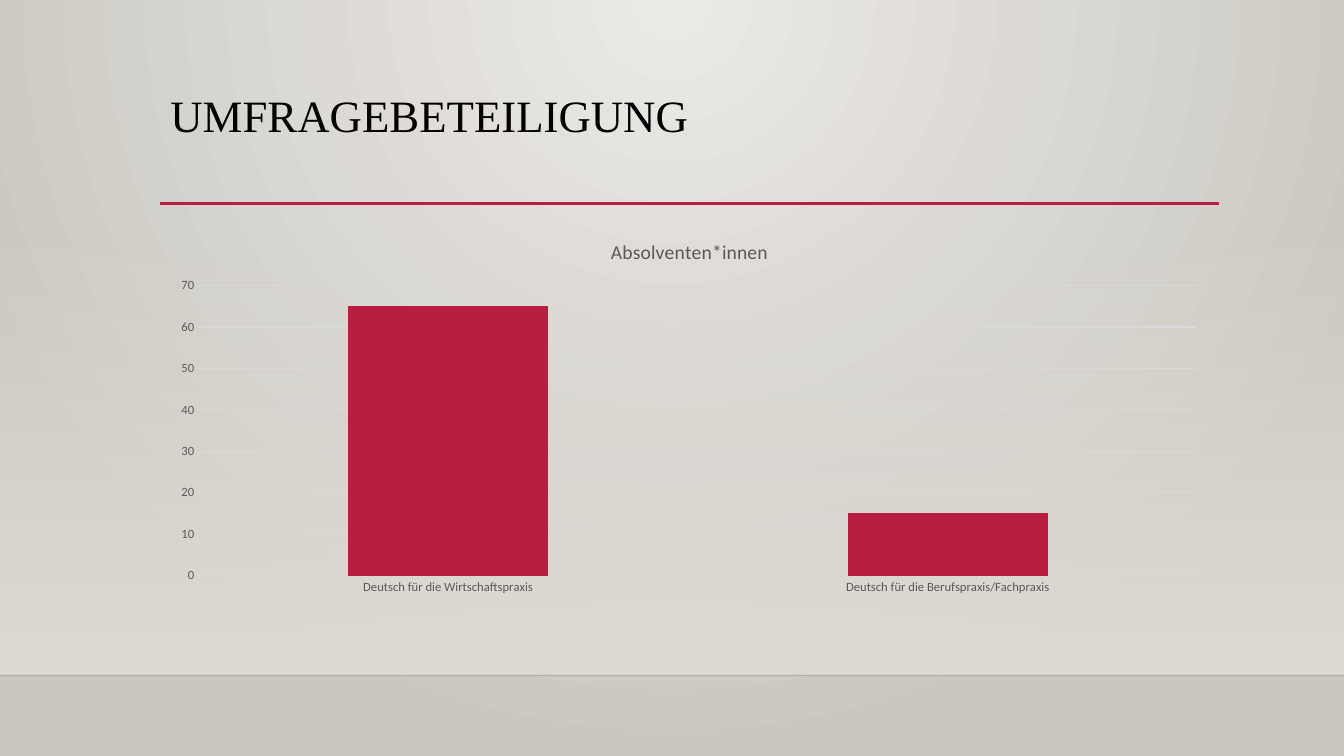
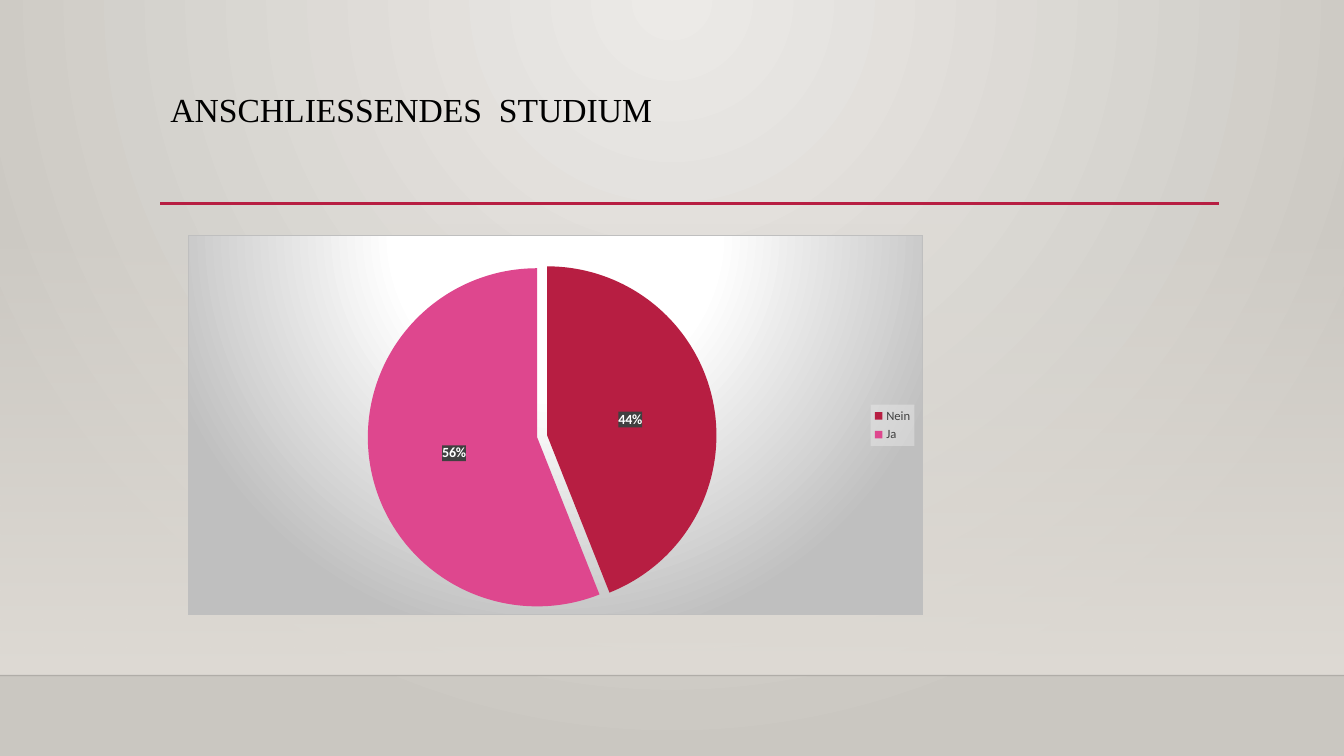
from pptx import Presentation
from pptx.chart.data import CategoryChartData
from pptx.dml.color import RGBColor
from pptx.enum.chart import (XL_CHART_TYPE, XL_LABEL_POSITION,
                             XL_LEGEND_POSITION, XL_TICK_MARK)
from pptx.enum.shapes import MSO_CONNECTOR, MSO_SHAPE, PP_PLACEHOLDER
from pptx.enum.text import MSO_ANCHOR, MSO_AUTO_SIZE, PP_ALIGN
from pptx.oxml import parse_xml
from pptx.oxml.ns import nsdecls, qn
from pptx.util import Pt

# Content
PARTICIPATION = {
    "title": "UMFRAGEBETEILIGUNG", "title_size": 32,
    "chart_title": "Absolventen*innen",
    "values": {"Deutsch für die Wirtschaftspraxis": 65,
               "Deutsch für die Berufspraxis/Fachpraxis": 15},
}
STUDIES = {
    "title": "ANSCHLIESSENDES  STUDIUM", "title_size": 24,
    "values": {"Nein": 44, "Ja": 56},
}

# Colours and fonts
BLACK = RGBColor(0x00, 0x00, 0x00)
WHITE = RGBColor(0xFF, 0xFF, 0xFF)
RED = RGBColor(0xB7, 0x1E, 0x42)
PINK = RGBColor(0xDE, 0x47, 0x8E)
PAGE_LIGHT = RGBColor(0xEC, 0xEA, 0xE7)
PAGE_DARK = RGBColor(0xCA, 0xC7, 0xC1)
BAND = RGBColor(0xDF, 0xDB, 0xD5)
AXIS_TEXT = RGBColor(0x59, 0x59, 0x59)
DARK_GREY = RGBColor(0x40, 0x40, 0x40)
MID_GREY = RGBColor(0xBF, 0xBF, 0xBF)
GRID = RGBColor(0xD9, 0xD9, 0xD9)
PALE_GREY = RGBColor(0xF2, 0xF2, 0xF2)
TITLE_FONT = "Times New Roman"
CHART_FONT = "Calibri"

# Geometry in points
SLIDE_WIDTH, SLIDE_HEIGHT = 960, 540
MARGIN, CONTENT_WIDTH = 114.5, 756
TITLE_BOX = (MARGIN, 63.5, CONTENT_WIDTH, 82.5)
RULE_Y = 145.5
BAND_TOP, BAND_BOTTOM = 159, 482.5
COLUMN_BOX = (MARGIN, 158.4, CONTENT_WIDTH, 271.5)
PIE_BOX = (134, 168, 525.5, 271.5)
PIE_PLOT = {"x": 0.04, "y": 0.07, "w": 0.884, "h": 0.919}


def points(box):
    return [Pt(value) for value in box]


def color_xml(color, alpha=100):
    return f'<a:srgbClr val="{color}"><a:alpha val="{alpha * 1000}"/></a:srgbClr>'


def solid_xml(color, alpha=100):
    return f"<a:solidFill>{color_xml(color, alpha)}</a:solidFill>"


def radial_xml(left, top, right, bottom):
    return (f'<a:path path="circle"><a:fillToRect l="{left * 1000}" t="{top * 1000}" '
            f'r="{right * 1000}" b="{bottom * 1000}"/></a:path>')


def gradient_xml(stops, direction):
    """Stops are (position, colour, alpha), all in percent."""
    stop_list = "".join(f'<a:gs pos="{position * 1000}">{color_xml(color, alpha)}</a:gs>'
                        for position, color, alpha in stops)
    return (f'<a:gradFill {nsdecls("a")} rotWithShape="1">'
            f"<a:gsLst>{stop_list}</a:gsLst>{direction}</a:gradFill>")


def replace_solid(parent, gradient):
    parent.replace(parent.find(qn("a:solidFill")), parse_xml(gradient))


def chart_properties(content):
    return parse_xml(f'<c:spPr {nsdecls("c", "a")}>{content}</c:spPr>')


def style_font(font, size, color, name=CHART_FONT, bold=False):
    font.size = Pt(size)
    font.color.rgb = color
    font.name = name
    font.bold = bold


def add_line(slide, left, right, y, color, width, alpha=100):
    line = slide.shapes.add_connector(MSO_CONNECTOR.STRAIGHT, *points((left, y, right, y)))
    line.line.color.rgb = color
    line.line.width = Pt(width)
    properties = line.element.spPr
    color_element = properties.find(".//" + qn("a:srgbClr"))
    color_element.append(parse_xml(f'<a:alpha {nsdecls("a")} val="{alpha * 1000}"/>'))
    properties.append(parse_xml(f'<a:effectLst {nsdecls("a")}/>'))
    return line


def set_background(master):
    master.background.fill.solid()
    stops = [(0, PAGE_LIGHT, 100), (100, PAGE_DARK, 100)]
    replace_solid(master.element.find(".//" + qn("p:bgPr")),
                  gradient_xml(stops, radial_xml(43, 0, 43, 100)))


def decorate_layout(layout, slide):
    """Build the band and rules on a slide, then move them to its layout."""
    for placeholder in list(layout.placeholders):
        if placeholder.placeholder_format.type != PP_PLACEHOLDER.TITLE:
            layout.shapes.element.remove(placeholder.element)
    band = slide.shapes.add_shape(
        MSO_SHAPE.RECTANGLE,
        *points((0, BAND_TOP, SLIDE_WIDTH, BAND_BOTTOM - BAND_TOP)))
    band.shadow.inherit = False
    band.line.fill.background()
    band.fill.solid()
    replace_solid(band.element.spPr, gradient_xml(
        [(0, BAND, 0), (100, BAND, 100)], '<a:lin ang="5400000" scaled="0"/>'))
    floor = add_line(slide, 0, SLIDE_WIDTH, BAND_BOTTOM, BLACK, 1, alpha=20)
    rule = add_line(slide, MARGIN, MARGIN + CONTENT_WIDTH, RULE_Y, RED, 2.5)
    for shape in (band, floor, rule):
        layout.shapes.element.append(shape.element)


def set_title(slide, content):
    title = slide.shapes.title
    title.left, title.top, title.width, title.height = points(TITLE_BOX)
    frame = title.text_frame
    frame.word_wrap = True
    frame.auto_size = MSO_AUTO_SIZE.NONE
    frame.vertical_anchor = MSO_ANCHOR.TOP
    paragraph = frame.paragraphs[0]
    paragraph.alignment = PP_ALIGN.LEFT
    paragraph.line_spacing = 0.9
    run = paragraph.add_run()
    run.text = content["title"]
    style_font(run.font, content["title_size"], BLACK, TITLE_FONT)


def add_chart(slide, kind, box, values):
    data = CategoryChartData()
    data.categories = list(values)
    data.add_series("Series 1", list(values.values()))
    chart = slide.shapes.add_chart(kind, *points(box), data).chart
    style_font(chart.font, 10, BLACK)
    chart.has_title = False
    chart.has_legend = False
    return chart


def add_column_chart(slide, content):
    chart = add_chart(slide, XL_CHART_TYPE.COLUMN_CLUSTERED, COLUMN_BOX, content["values"])
    chart.has_title = True
    run = chart.chart_title.text_frame.paragraphs[0].add_run()
    run.text = content["chart_title"]
    style_font(run.font, 14, AXIS_TEXT)
    chart.chart_title.include_in_layout = False

    # Columns
    plot = chart.plots[0]
    plot.gap_width = 150
    plot.vary_by_categories = False
    fill = plot.series[0].format.fill
    fill.solid()
    fill.fore_color.rgb = RED

    # Axes
    for axis in (chart.category_axis, chart.value_axis):
        axis.major_tick_mark = axis.minor_tick_mark = XL_TICK_MARK.NONE
        axis.format.line.fill.background()
        style_font(axis.tick_labels.font, 9, AXIS_TEXT)
    value_axis = chart.value_axis
    value_axis.minimum_scale, value_axis.maximum_scale, value_axis.major_unit = 0, 70, 10
    value_axis.has_major_gridlines = True
    grid_line = value_axis.major_gridlines.format.line
    grid_line.color.rgb = GRID
    grid_line.width = Pt(0.75)


def add_pie_chart(slide, content):
    chart = add_chart(slide, XL_CHART_TYPE.PIE, PIE_BOX, content["values"])
    chart_space = chart.element

    # Framed gradient panel
    panel = gradient_xml([(0, WHITE, 100), (39, WHITE, 100), (100, MID_GREY, 100)],
                         radial_xml(50, -80, 50, 180))
    border = f'<a:ln w="{Pt(0.75)}">{solid_xml(MID_GREY)}</a:ln>'
    chart_space.find(qn("c:chart")).addnext(chart_properties(panel + border))

    # Plot position
    plot_area = chart_space.find(".//" + qn("c:plotArea"))
    for layout in plot_area.findall(qn("c:layout")):
        plot_area.remove(layout)
    sizes = "".join(f'<c:{key} val="{value}"/>' for key, value in PIE_PLOT.items())
    plot_area.insert(0, parse_xml(
        f'<c:layout {nsdecls("c")}><c:manualLayout><c:layoutTarget val="inner"/>'
        f'<c:xMode val="edge"/><c:yMode val="edge"/>{sizes}</c:manualLayout></c:layout>'))

    # Slices, pulled slightly apart
    plot = chart.plots[0]
    plot.vary_by_categories = True
    series = plot.series[0]
    for index, color in enumerate((RED, PINK)):
        fill = series.points[index].format.fill
        fill.solid()
        fill.fore_color.rgb = color
    first_point = series.format.fill and series.points[0].format.fill
    first_point.fore_color.rgb = RED
    series_element = chart_space.find(".//" + qn("c:ser"))
    series_element.find(qn("c:dPt")).addprevious(
        parse_xml(f'<c:explosion {nsdecls("c")} val="3"/>'))

    # Percent labels
    labels = series.data_labels
    labels.show_percentage = True
    labels.show_value = False
    labels.number_format = "0%"
    labels.number_format_is_linked = False
    labels.position = XL_LABEL_POSITION.CENTER
    style_font(labels.font, 10, WHITE, bold=True)
    series_element.find(qn("c:dLbls")).find(qn("c:txPr")).addprevious(
        chart_properties(solid_xml(DARK_GREY)))

    # Legend
    chart.has_legend = True
    legend = chart.legend
    legend.position = XL_LEGEND_POSITION.RIGHT
    legend.include_in_layout = False
    style_font(legend.font, 9, DARK_GREY)
    chart_space.find(".//" + qn("c:legend")).find(qn("c:overlay")).addnext(
        chart_properties(solid_xml(PALE_GREY, 39)))


def main():
    presentation = Presentation()
    presentation.slide_width, presentation.slide_height = points((SLIDE_WIDTH, SLIDE_HEIGHT))
    set_background(presentation.slide_master)
    title_only = presentation.slide_layouts[5]
    builders = ((PARTICIPATION, add_column_chart), (STUDIES, add_pie_chart))
    for index, (content, add_content) in enumerate(builders):
        slide = presentation.slides.add_slide(title_only)
        if index == 0:
            decorate_layout(title_only, slide)
        set_title(slide, content)
        add_content(slide, content)
    presentation.save("out.pptx")


if __name__ == "__main__":
    main()
